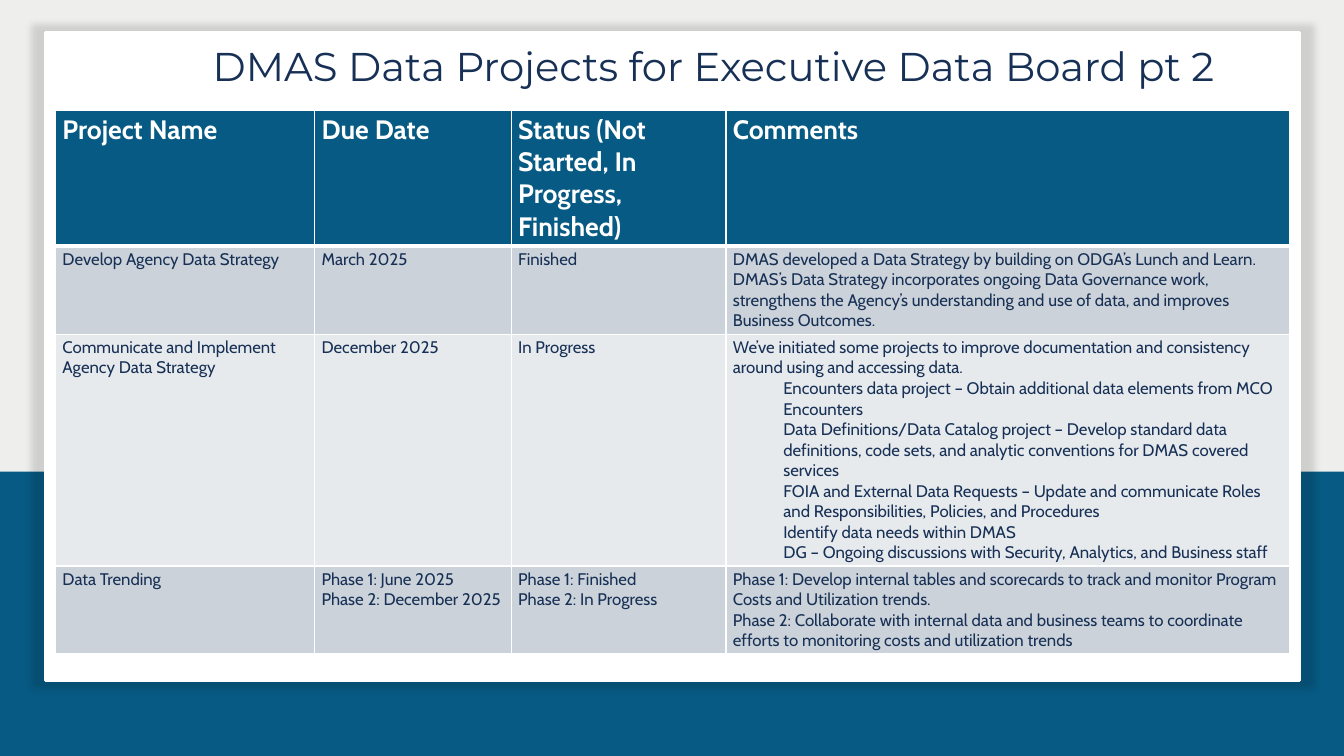
"""Build the data projects status slide."""
from lxml import etree
from pptx import Presentation
from pptx.dml.color import RGBColor
from pptx.enum.shapes import MSO_SHAPE
from pptx.enum.text import MSO_ANCHOR, MSO_AUTO_SIZE, PP_ALIGN
from pptx.oxml.ns import qn
from pptx.util import Inches, Pt

RECT = MSO_SHAPE.RECTANGLE
TOP = MSO_ANCHOR.TOP
FIXED = MSO_AUTO_SIZE.NONE
LEFT = PP_ALIGN.LEFT
BLUE, NAVY, WHITE = "075A83", "173055", "FFFFFF"
BANDS = [BLUE, "CCD2D9", "E7EAED", "CCD2D9"]


def paint(fill, color):
    fill.solid()
    fill.fore_color.rgb = RGBColor.from_string(color)


def write(para, text, font="Cabin", size=12, color=NAVY, bold=False, indent=0):
    if indent:
        props = para._p.get_or_add_pPr()
        props.set("marL", str(Inches(indent)))
        props.set("indent", "0")
        para.level = 1
    para.alignment = LEFT
    run = para.add_run()
    run.text = text
    run.font.name = font
    run.font.size = Pt(size)
    run.font.bold = bold
    paint(run.font.fill, color)


deck = Presentation()
deck.slide_width, deck.slide_height = Inches(13.33), Inches(7.5)
slide = deck.slides.add_slide(deck.slide_layouts[5])
paint(slide.background.fill, "EEEEED")

panels = [(0, 4.68, 13.33, 2.82, BLUE), (0.45, 0.32, 12.44, 6.43, WHITE)]
for *box, color in panels:
    card = slide.shapes.add_shape(RECT, *map(Inches, box))
    card.shadow.inherit = False
    paint(card.fill, color)
    card.line.fill.background()

paint(card.line.fill, WHITE)
card.line.width = Pt(2)
effects = card._element.spPr.find(qn("a:effectLst"))
shadow = etree.SubElement(effects, qn("a:outerShdw"), blurRad=str(Pt(5)), dist="0",
                          dir="0", sx="102000", sy="102000", algn="ctr", rotWithShape="0")
black = etree.SubElement(shadow, qn("a:srgbClr"), val="000000")
etree.SubElement(black, qn("a:alpha"), val="13000")

title = slide.shapes.title
title.left, title.top = Inches(2.11), Inches(0.33)
title.width, title.height = Inches(11.46), Inches(0.51)
frame = title.text_frame
frame.margin_left = frame.margin_right = frame.margin_top = frame.margin_bottom = 0
frame.vertical_anchor = TOP
frame.auto_size = FIXED
frame.word_wrap = True
head = frame.paragraphs[0]
head.line_spacing = Pt(40.2)
write(head, "DMAS Data Projects for Executive Data Board pt 2", font="Montserrat", size=28.7)
slide.shapes._spTree.append(title._element)

rows = [
    ["Project Name", "Due Date", "Status (Not Started, In Progress, Finished)", "Comments"],
    ["Develop Agency Data Strategy", "March 2025", "Finished",
     "DMAS developed a Data Strategy by building on ODGA’s Lunch and Learn. DMAS’s Data "
     "Strategy incorporates ongoing Data Governance work, strengthens the Agency’s "
     "understanding and use of data, and improves Business Outcomes."],
    ["Communicate and Implement Agency Data Strategy", "December 2025", "In Progress",
     "We’ve initiated some projects to improve documentation and consistency around using "
     "and accessing data.\n"
     "\tEncounters data project – Obtain additional data elements from MCO Encounters\n"
     "\tData Definitions/Data Catalog project – Develop standard data definitions, code sets, "
     "and analytic conventions for DMAS covered services\n"
     "\tFOIA and External Data Requests – Update and communicate Roles and Responsibilities, "
     "Policies, and Procedures\n"
     "\tIdentify data needs within DMAS\n"
     "\tDG – Ongoing discussions with Security, Analytics, and Business staff"],
    ["Data Trending", "Phase 1: June 2025\nPhase 2: December 2025",
     "Phase 1: Finished\nPhase 2: In Progress",
     "Phase 1: Develop internal tables and scorecards to track and monitor Program Costs and "
     "Utilization trends.\n"
     "Phase 2: Collaborate with internal data and business teams to coordinate efforts to "
     "monitoring costs and utilization trends"],
]
widths = [2.57, 1.95, 2.13, 5.59]
heights = [1.31, 0.87, 2.27, 0.87]
table = slide.shapes.add_table(len(rows), len(widths), Inches(0.55), Inches(1.1),
                               Inches(sum(widths)), Inches(sum(heights))).table
for col, width in zip(table.columns, widths):
    col.width = Inches(width)

for r, (row, height, band) in enumerate(zip(rows, heights, BANDS)):
    table.rows[r].height = Inches(height)
    style = dict(size=19, color=WHITE, bold=True) if r == 0 else {}
    for c, text in enumerate(row):
        cell = table.cell(r, c)
        cell.margin_left = cell.margin_right = Inches(0.07)
        cell.margin_top = cell.margin_bottom = Inches(0.03)
        props = cell._tc.get_or_add_tcPr()
        for side in "LRTB":
            thick = (r, side) in [(0, "B"), (1, "T")]
            edge = etree.SubElement(props, qn("a:ln" + side), w=str(Pt(3 if thick else 1)))
            solid = etree.SubElement(edge, qn("a:solidFill"))
            etree.SubElement(solid, qn("a:srgbClr"), val=WHITE)
        paint(cell.fill, band)
        body = cell.text_frame
        for n, line in enumerate(text.split("\n")):
            para = body.add_paragraph() if n else body.paragraphs[0]
            indent = 0.5 if line.startswith("\t") else 0
            write(para, line.strip(), indent=indent, **style)

deck.save("out.pptx")
